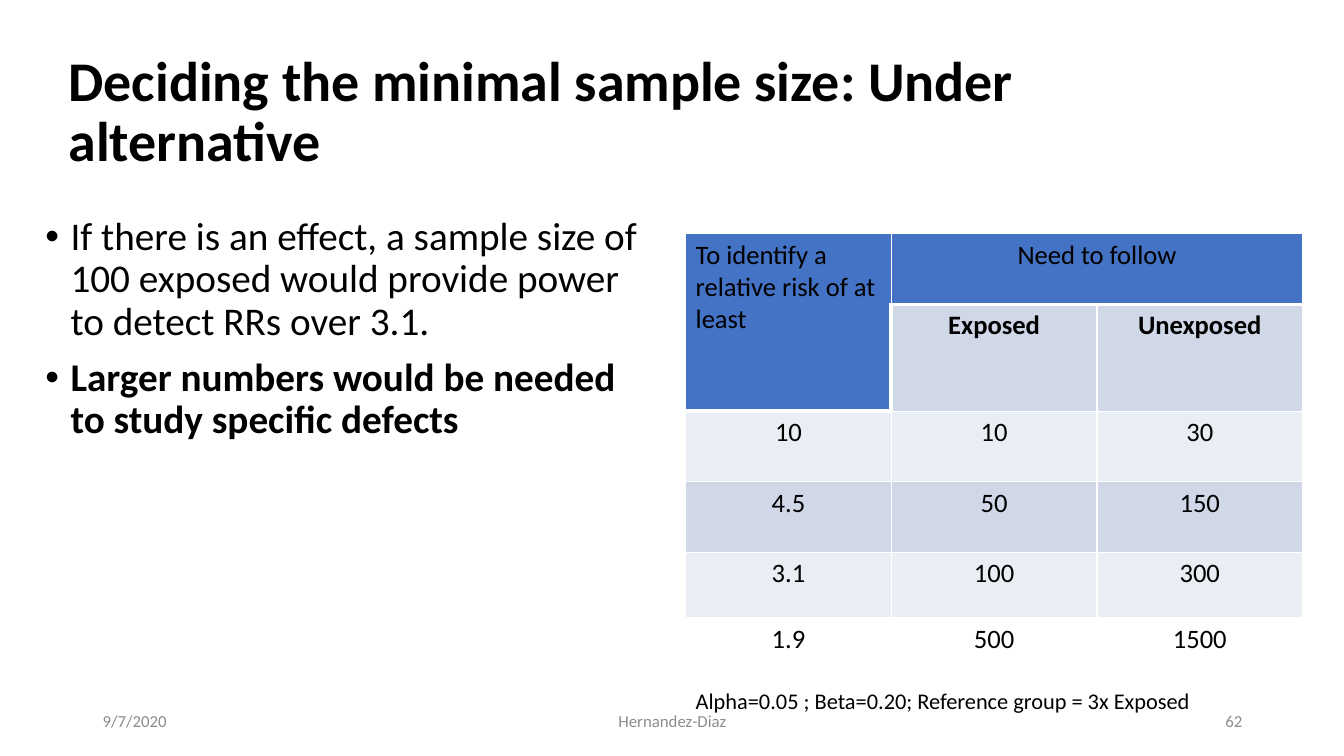
from lxml import etree
from pptx import Presentation
from pptx.dml.color import RGBColor
from pptx.enum.text import MSO_ANCHOR as Anchor, MSO_AUTO_SIZE as AutoSize, PP_ALIGN as Align
from pptx.oxml.ns import qn
from pptx.util import Inches, Pt

BLACK = RGBColor(0x00, 0x00, 0x00)
WHITE = RGBColor(0xFF, 0xFF, 0xFF)
GRAY = RGBColor(0x8C, 0x8C, 0x8C)
BLUE = RGBColor(0x44, 0x72, 0xC4)
BAND_DARK = RGBColor(0xD0, 0xD8, 0xE8)
BAND_LIGHT = RGBColor(0xE9, 0xED, 0xF4)


def add_run(paragraph, text, size, color=BLACK, bold=False):
    run = paragraph.add_run()
    run.text = text
    run.font.name = "Calibri"
    run.font.size = Pt(size)
    run.font.bold = bold
    run.font.color.rgb = color


def add_border(cell, side, width):
    line = etree.SubElement(cell._tc.get_or_add_tcPr(), qn(f"a:ln{side}"), w=str(Pt(width)))
    fill = etree.SubElement(line, qn("a:solidFill"))
    etree.SubElement(fill, qn("a:srgbClr"), val=str(WHITE))


presentation = Presentation()
presentation.slide_width = Inches(13.33)
presentation.slide_height = Inches(7.5)
slide = presentation.slides.add_slide(presentation.slide_layouts[1])

title = slide.shapes.title
title.left, title.top, title.width, title.height = (Inches(n) for n in (0.58, 0.4, 11.84, 1.45))
title.text_frame.auto_size = AutoSize.NONE
title.text_frame.vertical_anchor = Anchor.MIDDLE
paragraph = title.text_frame.paragraphs[0]
paragraph.alignment = Align.LEFT
paragraph.line_spacing = 0.9
add_run(paragraph, "Deciding the minimal sample size: Under alternative", 40, bold=True)

body = slide.placeholders[1]
body.left, body.top, body.width, body.height = (Inches(n) for n in (0.35, 2.1, 6.08, 4.3))
body.text_frame.auto_size = AutoSize.NONE
points = [
    ("If there is an effect, a sample size of 100 exposed would provide power to detect RRs over 3.1.", False),
    ("Larger numbers would be needed to study specific defects", True),
]
for index, (text, bold) in enumerate(points):
    paragraph = body.text_frame.add_paragraph() if index else body.text_frame.paragraphs[0]
    properties = paragraph._p.get_or_add_pPr()
    properties.set("marL", str(Inches(0.25)))
    properties.set("indent", str(-Inches(0.25)))
    etree.SubElement(properties, qn("a:buFont"), typeface="Arial")
    etree.SubElement(properties, qn("a:buChar"), char="•")
    paragraph.line_spacing = 0.9
    paragraph.space_before = Pt(10 if index else 0)
    add_run(paragraph, text, 28, bold=bold)

rows = [
    ("To identify a relative risk of at least", "Need to follow", ""),
    ("", "Exposed", "Unexposed"),
    ("10", "10", "30"),
    ("4.5", "50", "150"),
    ("3.1", "100", "300"),
    ("1.9", "500", "1500"),
    ("Alpha=0.05 ; Beta=0.20; Reference group = 3x Exposed", "", ""),
]
row_heights = [0.7, 0.7, 0.7, 0.7, 0.65, 0.65, 0.7]
row_fills = [BLUE, BAND_DARK, BAND_LIGHT, BAND_DARK, BAND_LIGHT, WHITE, WHITE]
last_row = len(rows) - 1
table = slide.shapes.add_table(
    len(rows), 3, Inches(6.8), Inches(2.32), Inches(6.12), Inches(sum(row_heights))
).table
for column in table.columns:
    column.width = Inches(2.04)
table.cell(0, 0).merge(table.cell(1, 0))
table.cell(0, 1).merge(table.cell(0, 2))
table.cell(last_row, 0).merge(table.cell(last_row, 2))

for row, texts in enumerate(rows):
    table.rows[row].height = Inches(row_heights[row])
    for column, text in enumerate(texts):
        cell = table.cell(row, column)
        in_corner = column == 0 and row < 2
        beside_corner = row == 1 and column == 1
        below_header = (row == 1 and column > 0) or (row == 2 and column == 0)
        add_border(cell, "L", 3 if beside_corner else 1)
        add_border(cell, "R", 1)
        add_border(cell, "T", 3 if below_header else 1)
        add_border(cell, "B", 3 if row == 0 or in_corner else 1)
        cell.fill.solid()
        cell.fill.fore_color.rgb = BLUE if in_corner else row_fills[row]
        if text:
            paragraph = cell.text_frame.paragraphs[0]
            paragraph.alignment = Align.LEFT if in_corner or row == last_row else Align.CENTER
            add_run(paragraph, text, 16 if row == last_row else 19, bold=row == 1)

footers = [
    ("9/7/2020", 0.92, 3, Align.LEFT),
    ("Hernandez-Diaz", 4.42, 4.5, Align.CENTER),
    ("62", 9.42, 3, Align.RIGHT),
]
for text, left, width, alignment in footers:
    footer = slide.shapes.add_textbox(Inches(left), Inches(6.95), Inches(width), Inches(0.4))
    footer.text_frame.word_wrap = True
    footer.text_frame.vertical_anchor = Anchor.MIDDLE
    paragraph = footer.text_frame.paragraphs[0]
    paragraph.alignment = alignment
    add_run(paragraph, text, 12, GRAY)

presentation.save("out.pptx")
